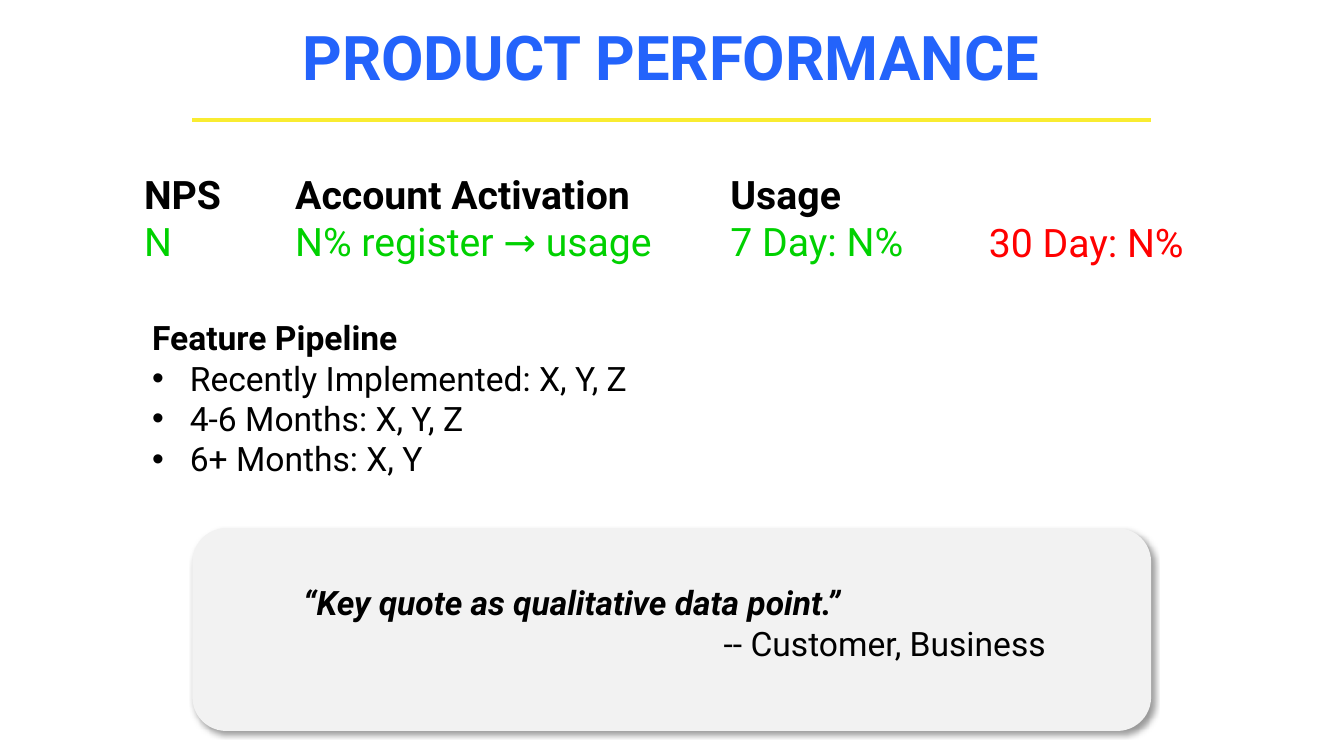
from lxml.etree import SubElement
from pptx import Presentation
from pptx.dml.color import RGBColor
from pptx.enum.shapes import MSO_CONNECTOR as Line, MSO_SHAPE as Shape
from pptx.enum.text import MSO_ANCHOR as Anchor, MSO_AUTO_SIZE as AutoSize, PP_ALIGN as Align
from pptx.oxml import parse_xml
from pptx.oxml.ns import nsdecls, qn
from pptx.util import Cm, Pt

BLACK, GREEN, RED = "000000", "00D100", "FF0000"
BLUE, YELLOW, GREY = "2363FB", "F9EC31", "F2F2F2"


def color(value):
    return RGBColor.from_string(value)


def write(box, lines, size, align=Align.LEFT, anchor=Anchor.TOP):
    """Fill a box with (text, colour, font formats) lines, one paragraph each."""
    frame = box.text_frame
    frame.word_wrap = True
    frame.auto_size = AutoSize.NONE
    frame.vertical_anchor = anchor
    for index, (text, ink, formats) in enumerate(lines):
        para = frame.paragraphs[0] if index == 0 else frame.add_paragraph()
        para.alignment = align
        para.space_before = Pt(0)
        span = para.add_run()
        span.text = text
        span.font.color.rgb = color(ink)
        for name, value in {"name": "Roboto", "size": Pt(size), **formats}.items():
            setattr(span.font, name, value)
    return frame.paragraphs


deck = Presentation()
deck.slide_width, deck.slide_height = Cm(33.87), Cm(19.05)
page = deck.slides.add_slide(deck.slide_layouts[1])
shapes = page.shapes
bold, plain = {"bold": True}, {"bold": False}

# Title and rule
title, pipeline = page.placeholders
title.left, title.top, title.width, title.height = Cm(2.26), Cm(0.18), Cm(29.31), Cm(2.46)
write(title, [("PRODUCT PERFORMANCE", BLUE, bold)], 44, Align.CENTER, Anchor.MIDDLE)

rule = shapes.add_connector(Line.STRAIGHT, Cm(4.85), Cm(3.02), Cm(29), Cm(3.02))
rule.line.color.rgb = color(YELLOW)
rule.line.width = Pt(3)
SubElement(rule._element.spPr, qn("a:effectLst"))

# Metrics
metrics = [
    (3.38, 3.07, "NPS", "N"),
    (7.19, 11.2, "Account Activation", "N% register → usage"),
    (18.16, 6.65, "Usage", "7 Day: N%"),
]
for left, width, heading, value in metrics:
    box = shapes.add_textbox(Cm(left), Cm(4.17), Cm(width), Cm(1.75))
    write(box, [(heading, BLACK, bold), (value, GREEN, plain)], 28)

month = shapes.add_textbox(Cm(24.05), Cm(5.38), Cm(6.65), Cm(1.75))
write(month, [("30 Day: N%", RED, plain)], 28, Align.CENTER)

# Feature pipeline
pipeline.left, pipeline.top, pipeline.width, pipeline.height = Cm(3.58), Cm(7.87), Cm(13.69), Cm(1.75)
features = ["Recently Implemented: X, Y, Z", "4-6 Months: X, Y, Z", "6+ Months: X, Y"]
lines = [("Feature Pipeline", BLACK, bold)] + [(text, BLACK, plain) for text in features]
heading, *items = write(pipeline, lines, 24)
for para, indent in [(heading, 0)] + [(item, Cm(0.95)) for item in items]:
    properties = para._p.get_or_add_pPr()
    properties.set("marL", str(indent))
    properties.set("indent", str(-indent))
    if indent:
        SubElement(properties, qn("a:buFont")).set("typeface", "Arial")
        SubElement(properties, qn("a:buChar")).set("char", "•")
    else:
        SubElement(properties, qn("a:buNone"))

# Quote card
card = shapes.add_shape(Shape.ROUNDED_RECTANGLE, Cm(4.85), Cm(13.31), Cm(24.16), Cm(5.11))
card.fill.solid()
card.fill.fore_color.rgb = color(GREY)
card.line.fill.background()
card._element.spPr.append(parse_xml(
    f'<a:effectLst {nsdecls("a")}>'
    f'<a:outerShdw blurRad="{Pt(4)}" dist="{Pt(3)}" dir="2700000" algn="tl" rotWithShape="0">'
    f'<a:srgbClr val="{BLACK}"><a:alpha val="40000"/></a:srgbClr>'
    '</a:outerShdw></a:effectLst>'))

quote = shapes.add_textbox(Cm(7.39), Cm(14.55), Cm(19.74), Cm(2.74))
words, author = write(quote, [
    ("“Key quote as qualitative data point.”", BLACK, {"bold": True, "italic": True}),
    ("-- Customer, Business", BLACK, plain),
], 24)
author._p.get_or_add_pPr().set("marL", str(Cm(10.6)))

deck.save("out.pptx")
